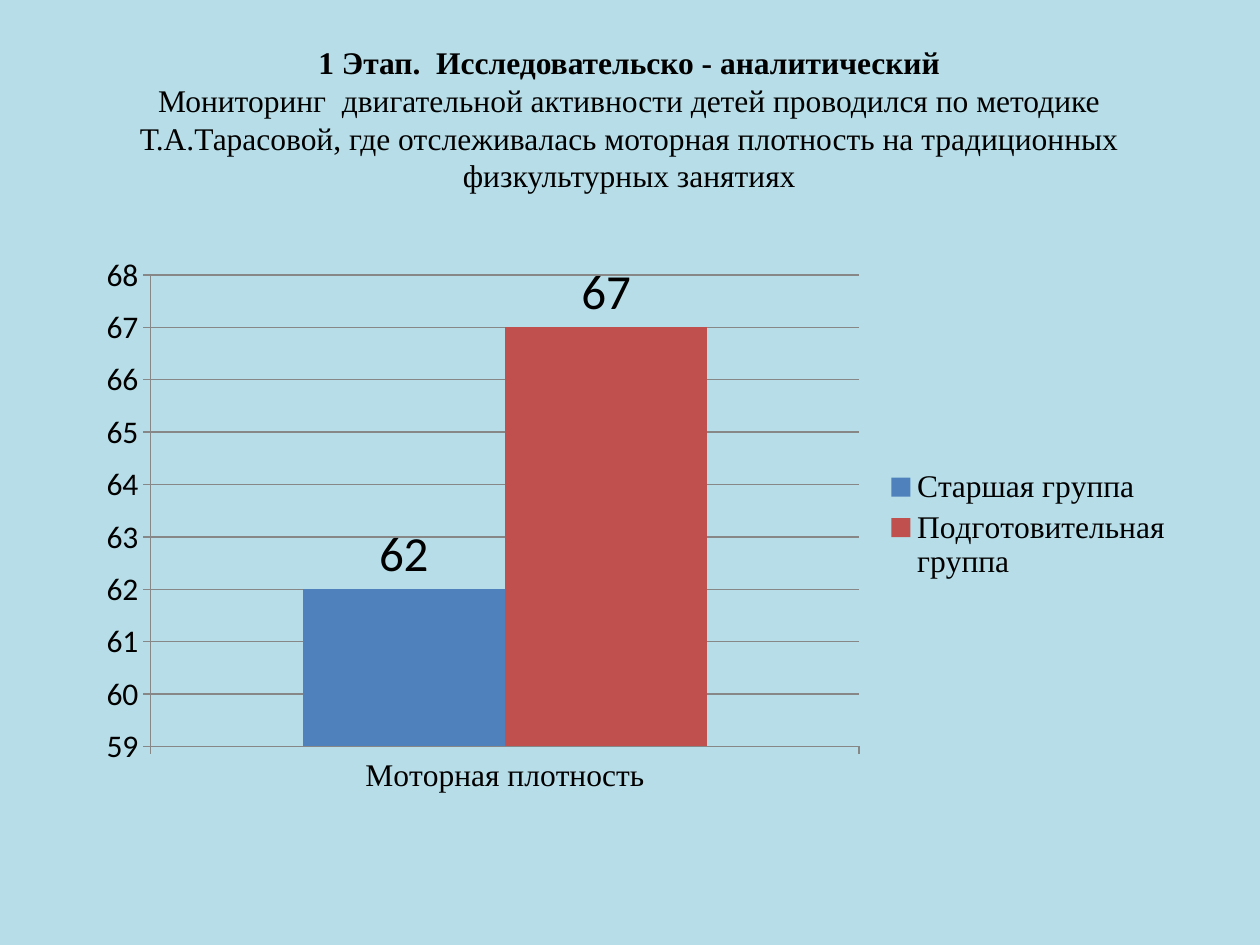
from dataclasses import dataclass
from pptx import Presentation
from pptx.chart.data import CategoryChartData as Data
from pptx.dml.color import RGBColor as Rgb
from pptx.enum.chart import XL_CHART_TYPE as Kind, XL_LABEL_POSITION as Spot
from pptx.enum.chart import XL_LEGEND_POSITION as Side, XL_TICK_MARK as Tick
from pptx.enum.text import PP_ALIGN as Align
from pptx.util import Inches, Pt


@dataclass(frozen=True)
class Theme:
    back: Rgb = Rgb(0xB7, 0xDE, 0xE8)
    ink: Rgb = Rgb(0, 0, 0)
    rule: Rgb = Rgb(0x87, 0x87, 0x87)
    serif: str = "Times New Roman"
    sans: str = "Calibri"
    body: Pt = Pt(18)
    label: Pt = Pt(28)


@dataclass(frozen=True)
class Box:
    """Place and size as shares of the slide."""
    left: float
    top: float
    width: float
    height: float

    def place(self) -> tuple[int, ...]:
        return (int(WIDE * self.left), int(HIGH * self.top),
                int(WIDE * self.width), int(HIGH * self.height))


@dataclass(frozen=True)
class Line:
    text: str
    bold: bool


@dataclass(frozen=True)
class Group:
    name: str
    value: int
    color: Rgb


THEME = Theme()
WIDE, HIGH = Inches(10), Inches(7.5)
HEAD = Box(0.043, 0.039, 0.913, 0.175)
PLOT = Box(0.067, 0.259, 0.874, 0.592)
LINES = (
    Line("1 Этап.  Исследовательско - аналитический", True),
    Line("Мониторинг  двигательной активности детей проводился по методике "
         "Т.А.Тарасовой, где отслеживалась моторная плотность на "
         "традиционных физкультурных занятиях", False),
)
GROUPS = (
    Group("Старшая группа", 62, Rgb(0x4F, 0x81, 0xBD)),
    Group("Подготовительная группа", 67, Rgb(0xC0, 0x50, 0x4D)),
)


def style(font, face: str, size: Pt = THEME.body, bold: bool = False) -> None:
    font.name, font.size, font.bold = face, size, bold
    font.color.rgb = THEME.ink


def add_head(slide, box: Box, lines: tuple[Line, ...]) -> None:
    frame = slide.shapes.add_textbox(*box.place()).text_frame
    frame.word_wrap = True
    for i, line in enumerate(lines):
        para = frame.add_paragraph() if i else frame.paragraphs[0]
        para.text, para.alignment = line.text, Align.CENTER
        style(para.font, THEME.serif, bold=line.bold)


def set_axis(axis, face: str) -> None:
    axis.major_tick_mark, axis.minor_tick_mark = Tick.OUTSIDE, Tick.NONE
    axis.format.line.color.rgb = THEME.rule
    style(axis.tick_labels.font, face)


def add_bars(slide, box: Box, title: str, groups: tuple[Group, ...]) -> None:
    data = Data(number_format="General")
    data.categories = [title]
    for group in groups:
        data.add_series(group.name, [group.value])
    chart = slide.shapes.add_chart(
        Kind.COLUMN_CLUSTERED, *box.place(), data).chart
    chart.has_title = False
    style(chart.font, THEME.sans)

    # Axes and grid
    set_axis(chart.category_axis, THEME.serif)
    axis = chart.value_axis
    set_axis(axis, THEME.sans)
    axis.minimum_scale, axis.maximum_scale, axis.major_unit = 59, 68, 1
    axis.has_major_gridlines = True
    axis.major_gridlines.format.line.color.rgb = THEME.rule

    # Legend
    chart.has_legend = True
    chart.legend.position = Side.RIGHT
    chart.legend.include_in_layout = False
    style(chart.legend.font, THEME.serif)

    # Bars and their values
    plot = chart.plots[0]
    plot.gap_width, plot.overlap, plot.vary_by_categories = 150, 0, False
    for bar, group in zip(plot.series, groups):
        bar.format.fill.solid()
        bar.format.fill.fore_color.rgb = group.color
        tags = bar.data_labels
        tags.show_value, tags.position = True, Spot.OUTSIDE_END
        style(tags.font, THEME.sans, THEME.label)


def main() -> None:
    deck = Presentation()
    deck.slide_width, deck.slide_height = WIDE, HIGH
    slide = deck.slides.add_slide(deck.slide_layouts[6])
    fill = slide.background.fill
    fill.solid()
    fill.fore_color.rgb = THEME.back
    add_head(slide, HEAD, LINES)
    add_bars(slide, PLOT, "Моторная плотность", GROUPS)
    deck.save("out.pptx")


if __name__ == "__main__":
    main()
